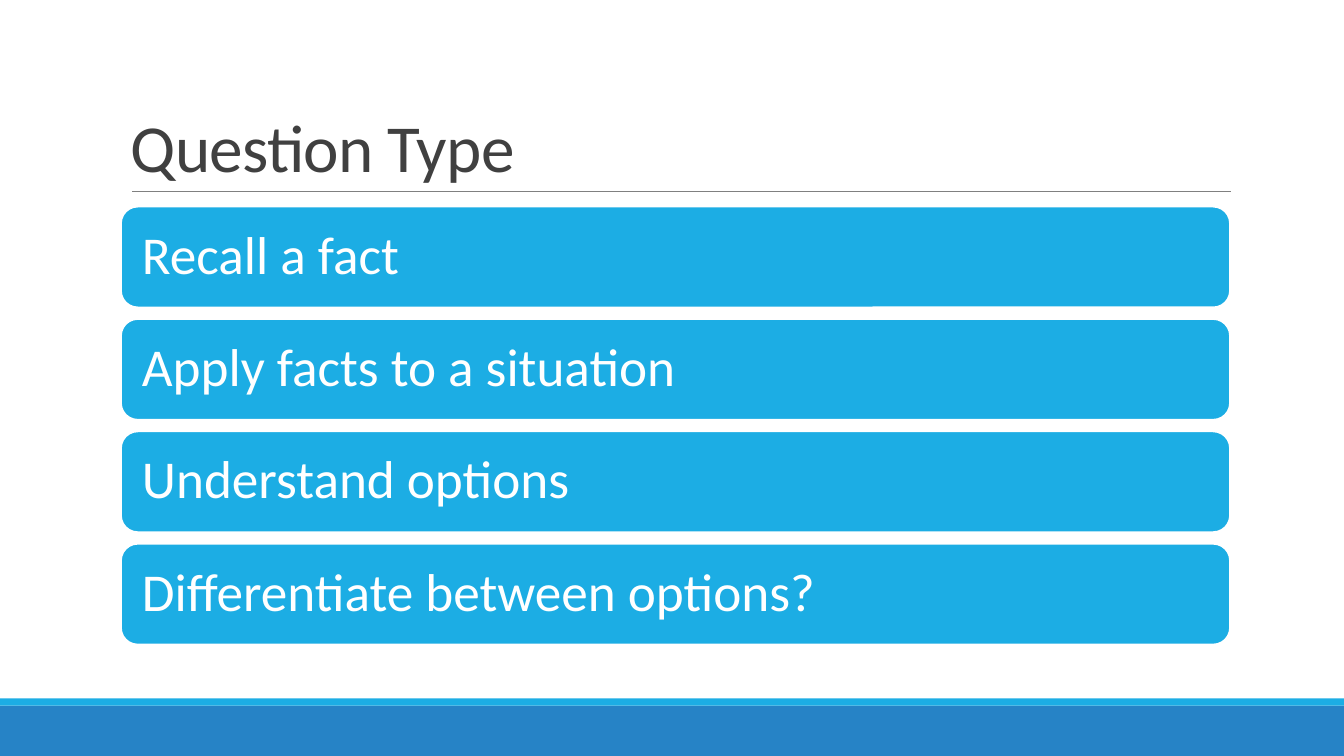
import pptx
import pptx.util
import pptx.dml.color
import pptx.enum.shapes
import pptx.enum.text

Inches, Pt = pptx.util.Inches, pptx.util.Pt
RGBColor = pptx.dml.color.RGBColor
Shape = pptx.enum.shapes.MSO_SHAPE
Anchor = pptx.enum.text.MSO_ANCHOR
Align = pptx.enum.text.PP_ALIGN

WHITE = RGBColor(0xFF, 0xFF, 0xFF)
SKY = RGBColor(0x1C, 0xAD, 0xE4)
BLUE = RGBColor(0x26, 0x83, 0xC6)
GREY = RGBColor(0x80, 0x80, 0x80)
DARK = RGBColor(0x40, 0x40, 0x40)

WIDE, HIGH = 13.33, 7.5
LEFT, SPAN = 1.2, 11
TOP, STEP, TALL = 2.05, 1.115, 1
TYPES = ["Recall a fact", "Apply facts to a situation",
         "Understand options", "Differentiate between options?"]

deck = pptx.Presentation()
deck.slide_width, deck.slide_height = Inches(WIDE), Inches(HIGH)
slide = deck.slides.add_slide(deck.slide_layouts[6])


def block(kind, x, y, w, h, color):
    shape = slide.shapes.add_shape(kind, Inches(x), Inches(y), Inches(w), Inches(h))
    shape.shadow.inherit = False
    shape.fill.solid()
    shape.fill.fore_color.rgb = color
    shape.line.fill.background()
    return shape


def write(frame, text, size, color, lead):
    frame.word_wrap = True
    para = frame.paragraphs[0]
    para.text = text
    para.alignment = Align.LEFT
    para.line_spacing = lead
    para.font.name = "Calibri"
    para.font.size = Pt(size)
    para.font.color.rgb = color
    return para


# Footer bands
block(Shape.RECTANGLE, 0, 7, WIDE, 0.5, BLUE)
block(Shape.RECTANGLE, 0, 6.93, WIDE, 0.07, SKY)

# Title and the rule below it
rule = slide.shapes.add_connector(
    pptx.enum.shapes.MSO_CONNECTOR.STRAIGHT,
    Inches(1.31), Inches(1.9), Inches(12.21), Inches(1.9))
rule.line.color.rgb = GREY
rule.line.width = Pt(0.5)
rule._element.spPr.append(pptx.oxml.parse_xml(
    '<a:effectLst xmlns:a="http://schemas.openxmlformats.org/drawingml/2006/main"/>'))

title = slide.shapes.add_textbox(Inches(LEFT), Inches(0.31), Inches(SPAN), Inches(1.59))
title.text_frame.vertical_anchor = Anchor.BOTTOM
para = write(title.text_frame, "Question Type", 48, DARK, 0.85)
para.runs[0]._r.get_or_add_rPr().set("spc", "-50")

# Question types
for row, text in enumerate(TYPES):
    bar = block(Shape.ROUNDED_RECTANGLE, LEFT, TOP + row * STEP, SPAN, TALL, SKY)
    bar.line.color.rgb = WHITE
    bar.line.width = Pt(1.25)
    frame = bar.text_frame
    frame.vertical_anchor = Anchor.MIDDLE
    frame.margin_left = frame.margin_right = Inches(0.16)
    write(frame, text, 38, WHITE, 0.9)

deck.save("out.pptx")
